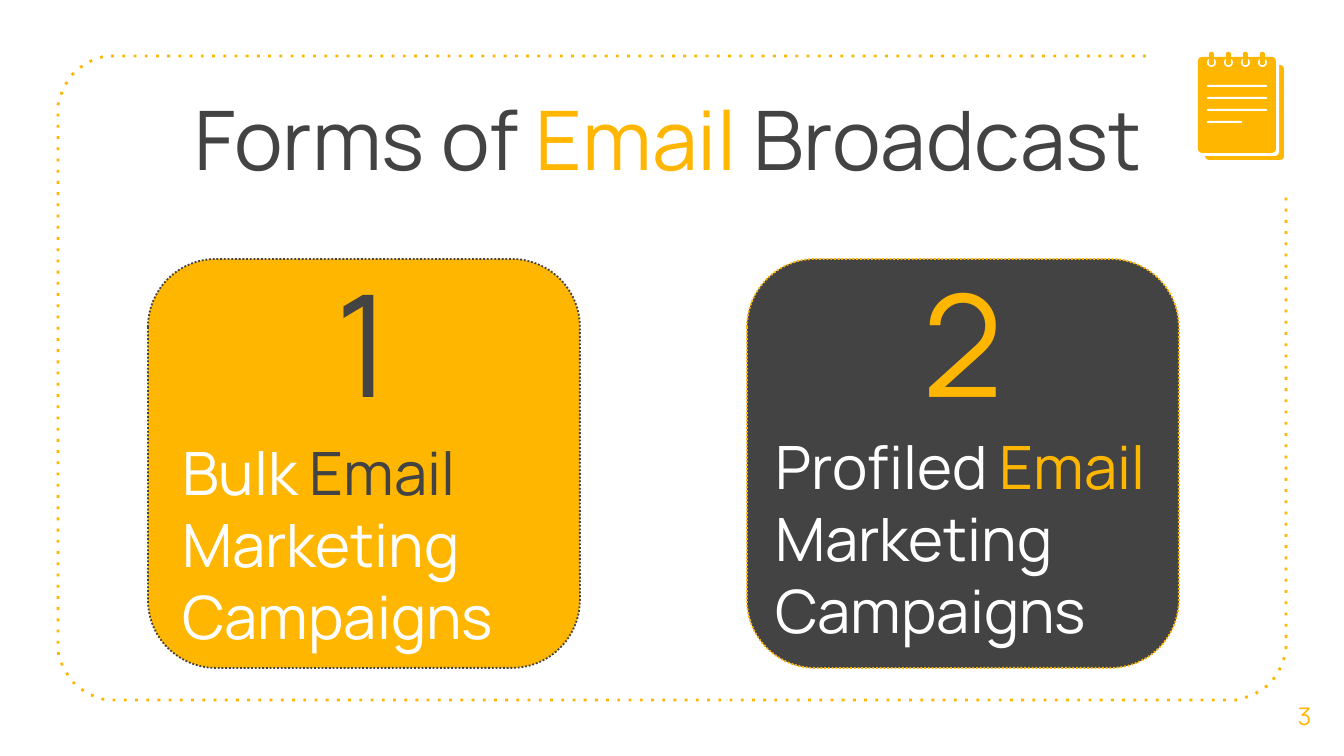
from math import cos, radians, sin

from pptx import Presentation
from pptx.dml.color import RGBColor
from pptx.enum.dml import MSO_LINE
from pptx.enum.shapes import MSO_SHAPE
from pptx.enum.text import MSO_ANCHOR, MSO_AUTO_SIZE, PP_ALIGN
from pptx.util import Emu, Pt

AMBER = RGBColor(0xFF, 0xB6, 0x00)
GRAPHITE = RGBColor(0x43, 0x43, 0x43)
WHITE = RGBColor(0xFF, 0xFF, 0xFF)
FONT = "Manrope"
SCALE = 914400 / 134.4  # EMU in one px
INSET = 13


def px(n):
    return Emu(round(n * SCALE))


def place(sp, box):
    sp.left, sp.top, sp.width, sp.height = map(px, box)


def write(sp, runs, size, align=PP_ALIGN.LEFT, anchor=MSO_ANCHOR.TOP):
    """Fill a text shape with one paragraph of (text, colour) runs."""
    tf = sp.text_frame
    tf.word_wrap = True
    tf.auto_size = MSO_AUTO_SIZE.NONE
    tf.vertical_anchor = anchor
    tf.margin_left = tf.margin_right = px(INSET)
    tf.margin_top = tf.margin_bottom = px(INSET)
    p = tf.paragraphs[0]
    p.alignment = align
    p.font.name, p.font.size = FONT, Pt(size)
    for text, color in runs:
        r = p.add_run()
        r.text = text
        r.font.color.rgb = color


def add_text(s, box, runs, size, **layout):
    write(s.shapes.add_textbox(*map(px, box)), runs, size, **layout)


def add_block(s, kind, box, fill, radius=None):
    """Add a flat preset shape without an outline; radius is in px."""
    sp = s.shapes.add_shape(kind, *map(px, box))
    sp.shadow.inherit = False
    sp.fill.solid()
    sp.fill.fore_color.rgb = fill
    sp.line.fill.background()
    if radius is not None:
        sp.adjustments[0] = radius / min(box[2:])
    return sp


def set_line(sp, color, width, dash):
    sp.line.color.rgb = color
    sp.line.width = Pt(width)
    sp.line.dash_style = dash


def add_frame(s, box, radius=56, top_gap=140, right_gap=140):
    """Dotted rounded frame, left open at its top right corner."""
    x, y, w, h = box
    right, bottom = x + w, y + h
    corners = [  # centre of each arc and its starting angle
        (x + radius, y + radius, 270),
        (x + radius, bottom - radius, 180),
        (right - radius, bottom - radius, 90),
    ]
    points = [
        (cx + radius * cos(radians(start - step)), cy + radius * sin(radians(start - step)))
        for cx, cy, start in corners
        for step in range(0, 91, 6)
    ]
    points.append((right, y + right_gap))
    builder = s.shapes.build_freeform(right - top_gap, y, scale=SCALE)
    builder.add_line_segments(points, close=False)
    sp = builder.convert_to_shape()
    sp.shadow.inherit = False
    sp.fill.background()
    set_line(sp, AMBER, 1.5, MSO_LINE.ROUND_DOT)
    # ROUND_DOT is the sysDot preset; the frame uses the wider dot
    sp.line._get_or_add_ln().prstDash.set("val", "dot")


def add_card(s, box, number, fill, accent, runs, text_box):
    """Rounded card with a large number; text_box is relative to the card."""
    x, y, w, h = box
    card = add_block(s, MSO_SHAPE.ROUNDED_RECTANGLE, box, fill)
    set_line(card, accent, 1, MSO_LINE.ROUND_DOT)
    add_text(s, (x + 145, y - 20, 141, 204), [(number, accent)], 76,
             align=PP_ALIGN.CENTER, anchor=MSO_ANCHOR.MIDDLE)
    dx, dy, tw, th = text_box
    add_text(s, (x + dx, y + dy, tw, th), runs, 32)


def add_notepad(s, x, y):
    """Notepad icon with its top left corner at x, y."""
    rounded = MSO_SHAPE.ROUNDED_RECTANGLE
    # Back sheet, gap and front page
    add_block(s, rounded, (x + 7, y + 13, 79, 95), AMBER, 4)
    add_block(s, rounded, (x, y + 5, 81, 99), WHITE, 4)
    add_block(s, rounded, (x, y + 5, 78, 96), AMBER, 4)
    # Punched holes with binding rings
    for i in range(4):
        left = x + 9 + 17 * i
        add_block(s, MSO_SHAPE.OVAL, (left, y + 6, 9, 9), WHITE)
        add_block(s, rounded, (left + 2, y, 5, 13), AMBER, 2)
    # Writing lines
    for i, width in enumerate((60, 60, 60, 35)):
        add_block(s, rounded, (x + 9, y + 33 + 12 * i, width, 2), WHITE, 1)


def main():
    prs = Presentation()
    prs.slide_width, prs.slide_height = px(1344), px(756)
    s = prs.slides.add_slide(prs.slide_layouts[5])

    add_frame(s, (58, 56, 1228, 644))

    # Heading
    title = s.shapes.title
    place(title, (181, 75, 1010, 126))
    write(title, [("Forms of ", GRAPHITE), ("Email", AMBER), (" Broadcast", GRAPHITE)], 44)

    # Two forms side by side
    add_card(s, (148, 259, 432, 409), "1", AMBER, GRAPHITE,
             [("Bulk", WHITE), (" Email ", GRAPHITE), ("Marketing Campaigns", WHITE)],
             (21, 164, 388, 238))
    add_card(s, (747, 259, 432, 409), "2", GRAPHITE, AMBER,
             [("Profiled ", WHITE), ("Email ", AMBER), ("Marketing Campaigns", WHITE)],
             (15, 158, 402, 253))

    add_notepad(s, 1198, 52)

    # Slide number
    add_text(s, (1265, 675, 79, 81), [("3", AMBER)], 13,
             align=PP_ALIGN.CENTER, anchor=MSO_ANCHOR.MIDDLE)

    prs.save("out.pptx")


if __name__ == "__main__":
    main()
